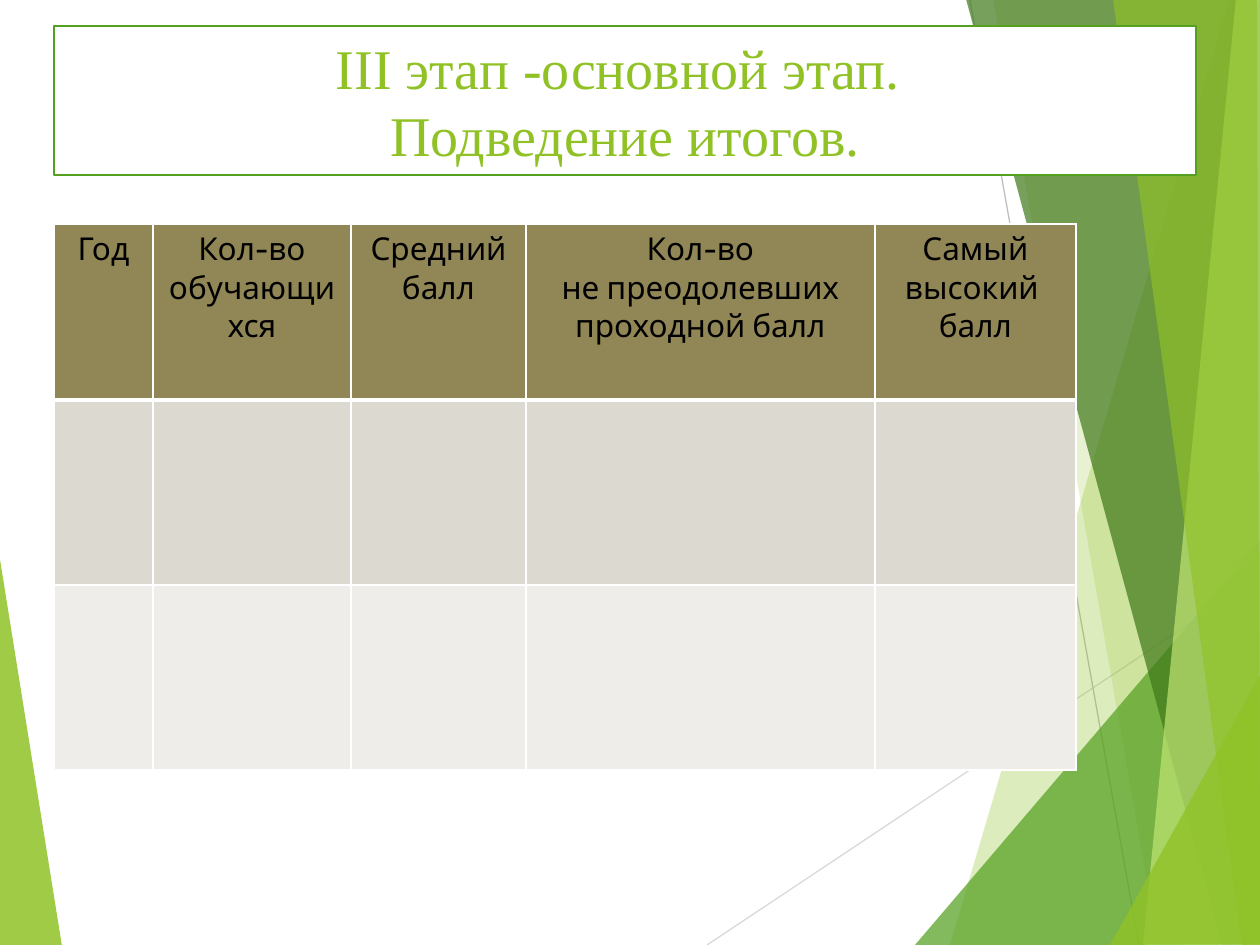
"""Builds the results slide: a framed title and an empty table over green facets."""
from lxml.etree import SubElement
from pptx import Presentation
from pptx.dml.color import RGBColor
from pptx.enum.text import MSO_ANCHOR, MSO_AUTO_SIZE, PP_ALIGN
from pptx.enum.shapes import MSO_CONNECTOR
from pptx.oxml.ns import qn
from pptx.util import Pt

SCALE = 914400 / 126
COLORS = {
    "lime": "90C226", "green": "54A021", "forest": "3F7819", "pale": "C0E474",
    "white": "FFFFFF", "black": "000000", "silver": "D9D9D9", "gray": "BFBFBF",
    "header": "918655", "band": "DCD9D1", "light band": "EEEDE9",
}


def px(length):
    return round(length * SCALE)


def color(name):
    return RGBColor.from_string(COLORS[name])


presentation = Presentation()
presentation.slide_width, presentation.slide_height = px(1260), px(945)
slide = presentation.slides.add_slide(presentation.slide_layouts[5])
shapes = slide.shapes

left_facet = ("lime", 85, [(-1, 553), (62, 946), (-1, 945)])
right_facets = [
    ("lime", 30, [(1229, 0), (950, 945), (1262, 946), (1261, 1)]),
    ("lime", 20, [(993, -1), (1158, 945), (1261, 945), (1261, -1)]),
    ("green", 72, [(915, 945), (1260, 541), (1261, 945)]),
    ("forest", 70, [(966, -1), (1222, 945), (1261, 944), (1261, -1)]),
    ("pale", 70, [(1236, -1), (1143, 945), (1261, 945), (1260, -1)]),
    ("lime", 65, [(1113, -1), (1242, 945), (1260, 945), (1257, -1)]),
    ("lime", 80, [(1110, 945), (1261, 674), (1261, 944)]),
]
for fill_name, opacity, points in [left_facet] + right_facets:
    builder = shapes.build_freeform(*points[0], scale=SCALE)
    builder.add_line_segments(points[1:], close=True)
    facet = builder.convert_to_shape()
    facet.shadow.inherit = False
    facet.line.fill.background()
    facet.fill.solid()
    facet.fill.fore_color.rgb = color(fill_name)
    fill_color = facet.fill._xPr.find(qn("a:solidFill"))[0]
    SubElement(fill_color, qn("a:alpha"), val=str(opacity * 1000))
    if points is left_facet[2]:
        for line_name, ends in [("silver", (707, 945, 1261, 576)), ("gray", (970, 0, 1139, 945))]:
            connector = shapes.add_connector(MSO_CONNECTOR.STRAIGHT, *map(px, ends))
            connector.line.color.rgb = color(line_name)
            connector.line.width = Pt(0.75)
            SubElement(connector._element.spPr, qn("a:effectLst"))

title = shapes.title
shapes._spTree.append(title._element)
title.left, title.top, title.width, title.height = map(px, (54, 26, 1142, 149))
title.fill.solid()
title.fill.fore_color.rgb = color("white")
title.line.color.rgb = color("green")
title.line.width = Pt(1.5)
frame = title.text_frame
frame.word_wrap = True
frame.auto_size = MSO_AUTO_SIZE.NONE
frame.vertical_anchor = MSO_ANCHOR.MIDDLE
paragraph = frame.paragraphs[0]
paragraph.alignment = PP_ALIGN.CENTER
for index, text in enumerate(["III этап -основной этап. ", "Подведение итогов."]):
    if index:
        paragraph.add_line_break()
    run = paragraph.add_run()
    run.text = text
    run.font.name = "Times New Roman"
    run.font.size = Pt(32)
    run.font.color.rgb = color("lime")

headers = [
    ["Год"],
    ["Кол-во обучающихся"],
    ["Средний балл"],
    ["Кол-во", "не преодолевших проходной балл"],
    ["Самый высокий ", "балл"],
]
column_widths = [99, 198, 175, 349, 201]
row_heights = [176, 185, 185]
row_fills = ["header", "band", "light band"]
table = shapes.add_table(
    len(row_heights), len(column_widths),
    *map(px, (54, 224, sum(column_widths), sum(row_heights))),
).table
table.first_row = False
table.horz_banding = False
for column, width in zip(table.columns, column_widths):
    column.width = px(width)

for row_index, (row, height) in enumerate(zip(table.rows, row_heights)):
    row.height = px(height)
    for column_index, cell in enumerate(row.cells):
        properties = cell._tc.get_or_add_tcPr()
        thick_side = {0: "lnB", 1: "lnT"}.get(row_index)
        for side in ("lnL", "lnR", "lnT", "lnB"):
            weight = Pt(3 if side == thick_side else 1)
            border = SubElement(properties, qn(f"a:{side}"), w=str(weight))
            border_fill = SubElement(border, qn("a:solidFill"))
            SubElement(border_fill, qn("a:srgbClr"), val=COLORS["white"])
        cell.fill.solid()
        cell.fill.fore_color.rgb = color(row_fills[row_index])
        if row_index:
            continue
        for index, text in enumerate(headers[column_index]):
            paragraph = cell.text_frame.add_paragraph() if index else cell.text_frame.paragraphs[0]
            paragraph.alignment = PP_ALIGN.CENTER
            run = paragraph.add_run()
            run.text = text
            run.font.name = "Cabin"
            run.font.size = Pt(18)
            run.font.color.rgb = color("black")

presentation.save("out.pptx")
